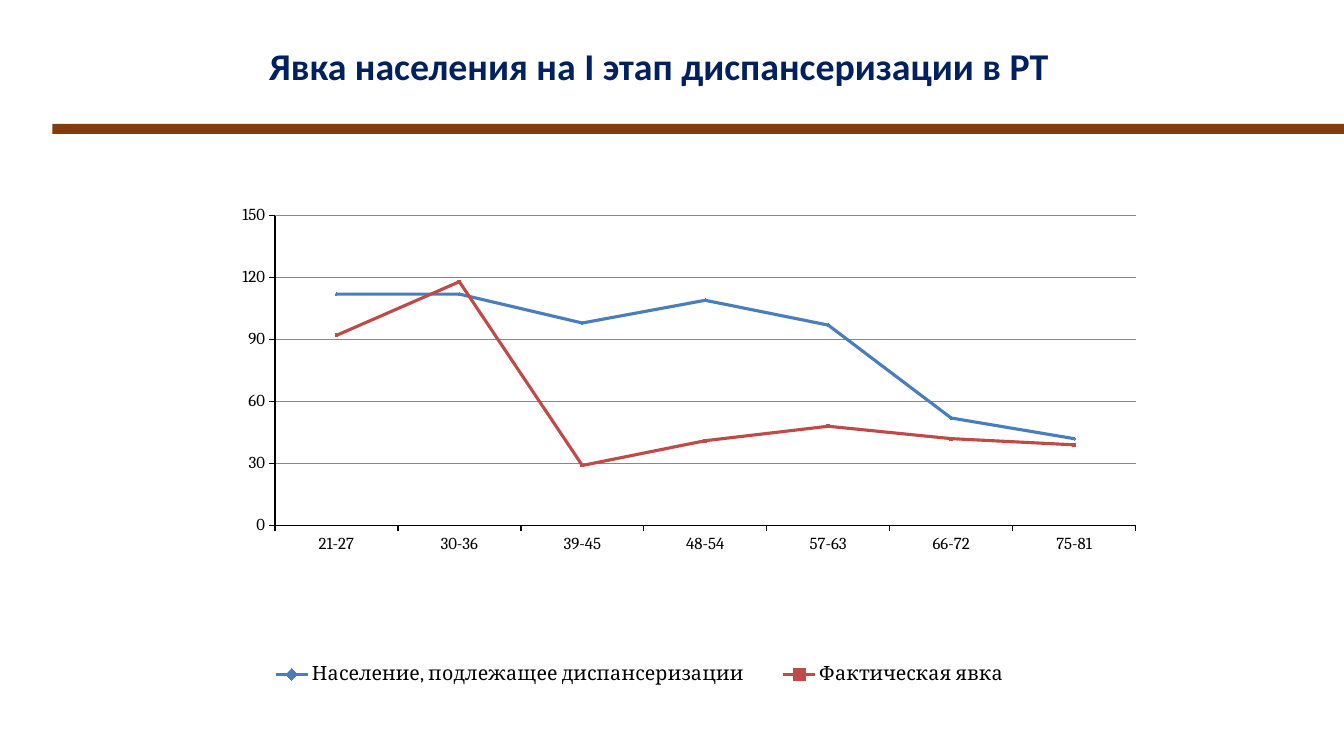
"""Build a slide with a line chart of turnout for health checks by age group."""
from lxml import etree
from pptx import Presentation
from pptx.chart.data import CategoryChartData
from pptx.dml.color import RGBColor
from pptx.enum.chart import (XL_CHART_TYPE, XL_LEGEND_POSITION, XL_MARKER_STYLE,
                             XL_TICK_LABEL_POSITION, XL_TICK_MARK)
from pptx.enum.shapes import MSO_SHAPE
from pptx.enum.text import PP_ALIGN
from pptx.oxml.ns import qn
from pptx.util import Inches, Pt

RECT = MSO_SHAPE.RECTANGLE
CENTER = PP_ALIGN.CENTER
LINES = XL_CHART_TYPE.LINE_MARKERS
BOTTOM = XL_LEGEND_POSITION.BOTTOM
LOW = XL_TICK_LABEL_POSITION.LOW
OUTSIDE, NO_TICK = XL_TICK_MARK.OUTSIDE, XL_TICK_MARK.NONE
DIAMOND, SQUARE = XL_MARKER_STYLE.DIAMOND, XL_MARKER_STYLE.SQUARE

AGES = ["21-27", "30-36", "39-45", "48-54", "57-63", "66-72", "75-81"]
SERIES = [
    ("Население, подлежащее диспансеризации", [112, 112, 98, 109, 97, 52, 42],
     "4A7EBB", "4F81BD", DIAMOND),
    ("Фактическая явка", [92, 118, 29, 41, 48, 42, 39],
     "BE4B48", "C0504D", SQUARE),
]


def color(code):
    """Turn a hex string into a colour."""
    return RGBColor.from_string(code)


def place(parent, index, box):
    """Give a chart part a fixed place in fractions of the chart."""
    for old in parent.findall(qn("c:layout")):
        parent.remove(old)
    layout = etree.Element(qn("c:layout"))
    parent.insert(index, layout)
    manual = etree.SubElement(layout, qn("c:manualLayout"))
    for tag, value in box.items():
        etree.SubElement(manual, qn("c:" + tag)).set("val", str(value))


deck = Presentation()
deck.slide_width, deck.slide_height = Inches(13.33), Inches(7.5)
slide = deck.slides.add_slide(deck.slide_layouts[6])

title = slide.shapes.add_textbox(Inches(0), Inches(0.36), Inches(13.07), Inches(0.57))
frame = title.text_frame
margins = dict.fromkeys(["left", "top", "right", "bottom"], Inches(0.06))
for side, size in margins.items():
    setattr(frame, "margin_" + side, size)
frame.word_wrap = True
para = frame.paragraphs[0]
para.text = "Явка населения на I этап диспансеризации в РТ"
para.alignment = CENTER
for name, value in {"name": "Calibri", "size": Pt(27), "bold": True}.items():
    setattr(para.font, name, value)
para.font.color.rgb = color("002060")

bar = slide.shapes.add_shape(RECT, Inches(0.52), Inches(1.23), Inches(12.81), Inches(0.1))
bar.shadow.inherit = False
bar.fill.solid()
bar.fill.fore_color.rgb = color("843C0C")
bar.line.fill.background()

data = CategoryChartData()
data.categories = AGES
for name, values, *_ in SERIES:
    data.add_series(name, values)
chart = slide.shapes.add_chart(LINES, Inches(1.94), Inches(1.86), Inches(9.37),
                               Inches(5.28), data).chart
chart.has_title = False
chart.has_legend = True
chart.legend.position = BOTTOM
chart.legend.include_in_layout = True
ages, counts = chart.category_axis, chart.value_axis

for font, face, size in [(chart.font, "Calibri", 10), (chart.legend.font, "Cambria", 14),
                         (ages.tick_labels.font, "Cambria", 12),
                         (counts.tick_labels.font, "Cambria", 12)]:
    font.name, font.size = face, Pt(size)
    font.color.rgb = color("000000")

ages.tick_label_position = LOW
for name, value in {"minimum_scale": 0, "maximum_scale": 150, "major_unit": 30,
                    "has_major_gridlines": True}.items():
    setattr(counts, name, value)
counts.tick_labels.number_format = "0"
counts.tick_labels.number_format_is_linked = False
for axis in (ages, counts):
    axis.major_tick_mark, axis.minor_tick_mark = OUTSIDE, NO_TICK
for line, code in [(ages.format.line, "000000"), (counts.format.line, "000000"),
                   (counts.major_gridlines.format.line, "888888")]:
    line.width = Pt(1)
    line.color.rgb = color(code)

plot = chart.plots[0]
plot.vary_by_categories = False
for series, (_, _, code, tint, style) in zip(plot.series, SERIES):
    series.smooth = False
    series.format.line.width = Pt(2.25)
    series.format.line.color.rgb = color(code)
    marker = series.marker
    marker.style, marker.size = style, 2
    marker.format.fill.solid()
    marker.format.fill.fore_color.rgb = color(tint)
    marker.format.line.color.rgb = color(code)

body = chart.element.find(qn("c:chart"))
edges = {"xMode": "edge", "yMode": "edge"}
place(body.find(qn("c:plotArea")), 0,
      {"layoutTarget": "inner", **edges, "x": 0.084, "y": 0.053, "w": 0.911, "h": 0.582})
place(body.find(qn("c:legend")), 1,
      {**edges, "x": 0.05, "y": 0.88, "w": 0.84, "h": 0.07})

deck.save("out.pptx")
